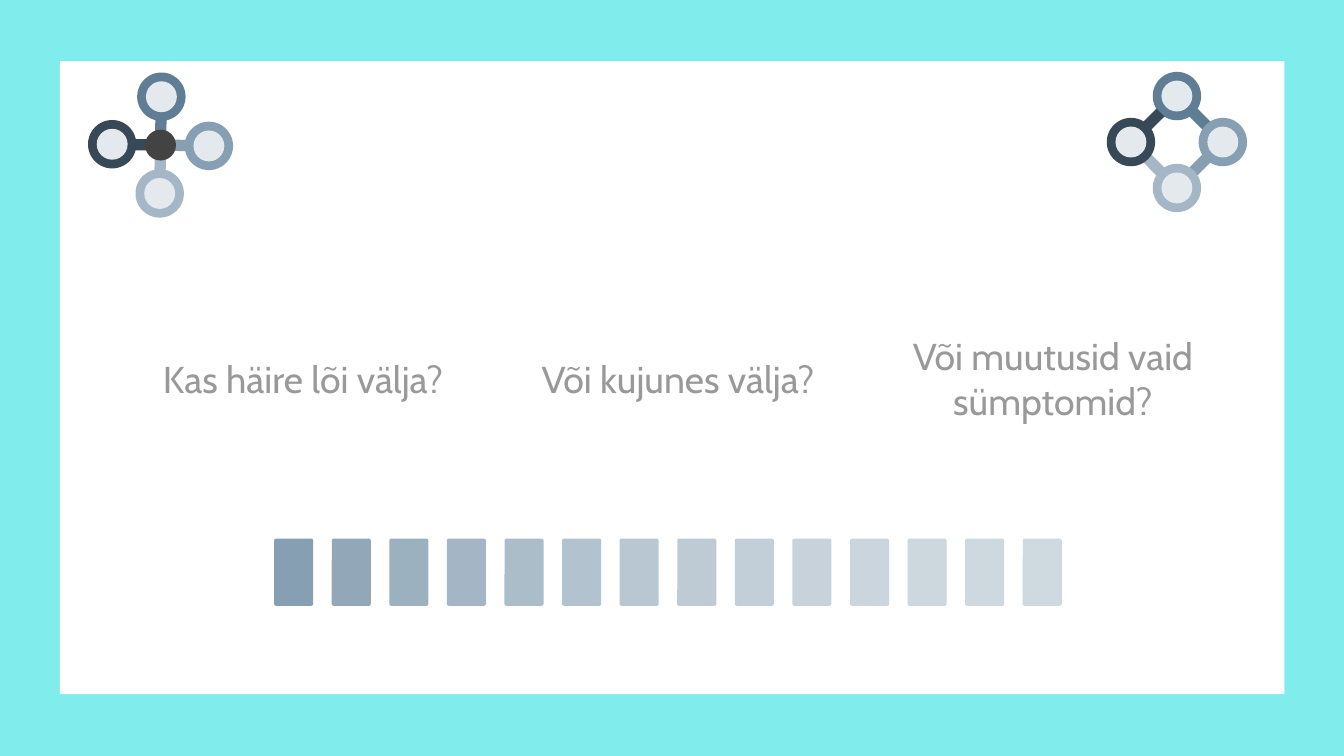
from math import asin, cos, degrees, radians, sin

from pptx import Presentation
from pptx.dml.color import RGBColor
from pptx.enum.shapes import MSO_SHAPE
from pptx.enum.text import MSO_ANCHOR, MSO_AUTO_SIZE, PP_ALIGN
from pptx.util import Inches, Pt

RECT, ROUNDED, OVAL = MSO_SHAPE.RECTANGLE, MSO_SHAPE.ROUNDED_RECTANGLE, MSO_SHAPE.OVAL
MIDDLE, CENTER, NO_FIT = MSO_ANCHOR.MIDDLE, PP_ALIGN.CENTER, MSO_AUTO_SIZE.NONE

# The grid has square cells: 100 columns by 56.25 rows, a 16:9 slide
COLUMNS, ROWS = 100, 56.25
CELL = Inches(0.1)
SECTION_LAYOUT = 2

QUESTIONS = ["Kas häire lõi välja?", "Või kujunes välja?", "Või muutusid vaid sümptomid?"]
BAR_COLORS = ["869FB2", "92A8B9", "9CB1C0", "A4B6C5", "ACBDCA", "B2C2CE", "B8C7D2",
              "BECBD5", "C2CFD8", "C7D2DB", "CAD5DD", "CCD7DE", "CED8DF", "CFD9E0"]
# Node colours clockwise from the top
NODE_COLORS = ["5F7D95", "869FB2", "A5B7C6", "374957"]


def color(value):
    return RGBColor.from_string(value)


def cells(count):
    return round(count * CELL)


def set_all(target, values):
    for name, value in values.items():
        setattr(target, name, value)


class SlideBuilder:
    background, panel_fill = "81ECEC", "FFFFFF"
    disc_fill, hub_fill, text_color = "E3E9ED", "434343", "999999"
    node_radius, disc_radius, arm_length, arm_width = 1.8, 1.15, 3.1, 0.84
    frame_format = {"word_wrap": True, "auto_size": NO_FIT, "vertical_anchor": MIDDLE,
                    "margin_left": CELL, "margin_right": CELL,
                    "margin_top": CELL, "margin_bottom": CELL}
    paragraph_format = {"alignment": CENTER, "space_before": Pt(0),
                        "space_after": Pt(6), "line_spacing": 1.0}
    font_format = {"name": "Cabin", "size": Pt(20), "bold": False}

    def __init__(self, slide):
        self.slide = slide
        fill = slide.background.fill
        fill.solid()
        fill.fore_color.rgb = color(self.background)

    def paint(self, shape, fill):
        shape.shadow.inherit = False
        shape.fill.solid()
        shape.fill.fore_color.rgb = color(fill)
        shape.line.fill.background()
        return shape

    def box(self, parent, kind, left, top, width, height, fill):
        shape = parent.shapes.add_shape(kind, *map(cells, (left, top, width, height)))
        return self.paint(shape, fill)

    def panel(self, left, top, width, height):
        panel = self.box(self.slide, RECT, left, top, width, height, self.panel_fill)
        # Lay the panel behind the placeholder
        self.slide.shapes._spTree.insert(2, panel._element)

    def question(self, text, left, top, width, height, holder=None):
        place = [cells(n) for n in (left, top, width, height)]
        if holder is None:
            holder = self.slide.shapes.add_textbox(*place)
        set_all(holder, dict(zip(("left", "top", "width", "height"), place)))
        frame = holder.text_frame
        frame.text = text
        set_all(frame, self.frame_format)
        paragraph = frame.paragraphs[0]
        set_all(paragraph, self.paragraph_format)
        set_all(paragraph.runs[0].font, self.font_format)
        paragraph.runs[0].font.color.rgb = color(self.text_color)
        properties = paragraph._p.get_or_add_pPr()
        properties.set("marL", str(cells(1.5)))
        properties.set("indent", "0")

    def bars(self, first, last, top, width, height):
        group = self.slide.shapes.add_group_shape()
        pitch = (last - first) / (len(BAR_COLORS) - 1)
        for index, fill in enumerate(BAR_COLORS):
            bar = self.box(group, ROUNDED, first + index * pitch, top, width, height, fill)
            bar.adjustments[0] = 0.05

    def disc(self, group, x, y, fill):
        radius = self.disc_radius
        self.box(group, OVAL, x - radius, y - radius, 2 * radius, 2 * radius, fill)

    def node(self, group, x, y, arm_angle, fill):
        """A circle with one straight arm, drawn as a single outline."""
        half = self.arm_width / 2
        gap = degrees(asin(half / self.node_radius))
        steps = 60
        outline = []
        for step in range(steps + 1):
            turn = radians(gap + (360 - 2 * gap) * step / steps)
            outline.append((self.node_radius * cos(turn), self.node_radius * sin(turn)))
        outline += [(self.arm_length, -half), (self.arm_length, half)]
        c, s = cos(radians(arm_angle)), sin(radians(arm_angle))
        points = [(cells(x + u * c - v * s), cells(y + u * s + v * c)) for u, v in outline]
        builder = group.shapes.build_freeform(*points[0])
        builder.add_line_segments(points[1:])
        self.paint(builder.convert_to_shape(), fill)

    def network(self, x, y, radius, arm_turn, tilt=0, hub=False):
        group = self.slide.shapes.add_group_shape()
        for index, fill in enumerate(NODE_COLORS):
            angle = 90 * index - 90 + tilt
            node_x = x + radius * cos(radians(angle))
            node_y = y + radius * sin(radians(angle))
            self.node(group, node_x, node_y, angle + arm_turn, fill)
            self.disc(group, node_x, node_y, self.disc_fill)
        if hub:
            self.disc(group, x, y, self.hub_fill)


def main():
    deck = Presentation()
    deck.slide_width, deck.slide_height = cells(COLUMNS), cells(ROWS)
    slide = deck.slides.add_slide(deck.slide_layouts[SECTION_LAYOUT])
    unused_title = slide.shapes.title._element
    unused_title.getparent().remove(unused_title)
    builder = SlideBuilder(slide)

    # White panel
    builder.panel(4.46, 4.55, 91.1, 47.1)

    # Three questions; the first fills the body placeholder
    holders = [slide.placeholders[1], None, None]
    for index, (text, holder) in enumerate(zip(QUESTIONS, holders)):
        builder.question(text, 9 + 27.9 * index, 11.15, 25.6, 34, holder)

    # Fading bars
    builder.bars(first=20.4, last=76.1, top=40.08, width=2.9, height=5)

    # Ring on the right, star with a hub on the left
    builder.network(87.57, 10.57, radius=3.42, arm_turn=135)
    builder.network(11.95, 10.8, radius=3.6, arm_turn=180, tilt=1, hub=True)

    deck.save("out.pptx")


if __name__ == "__main__":
    main()
